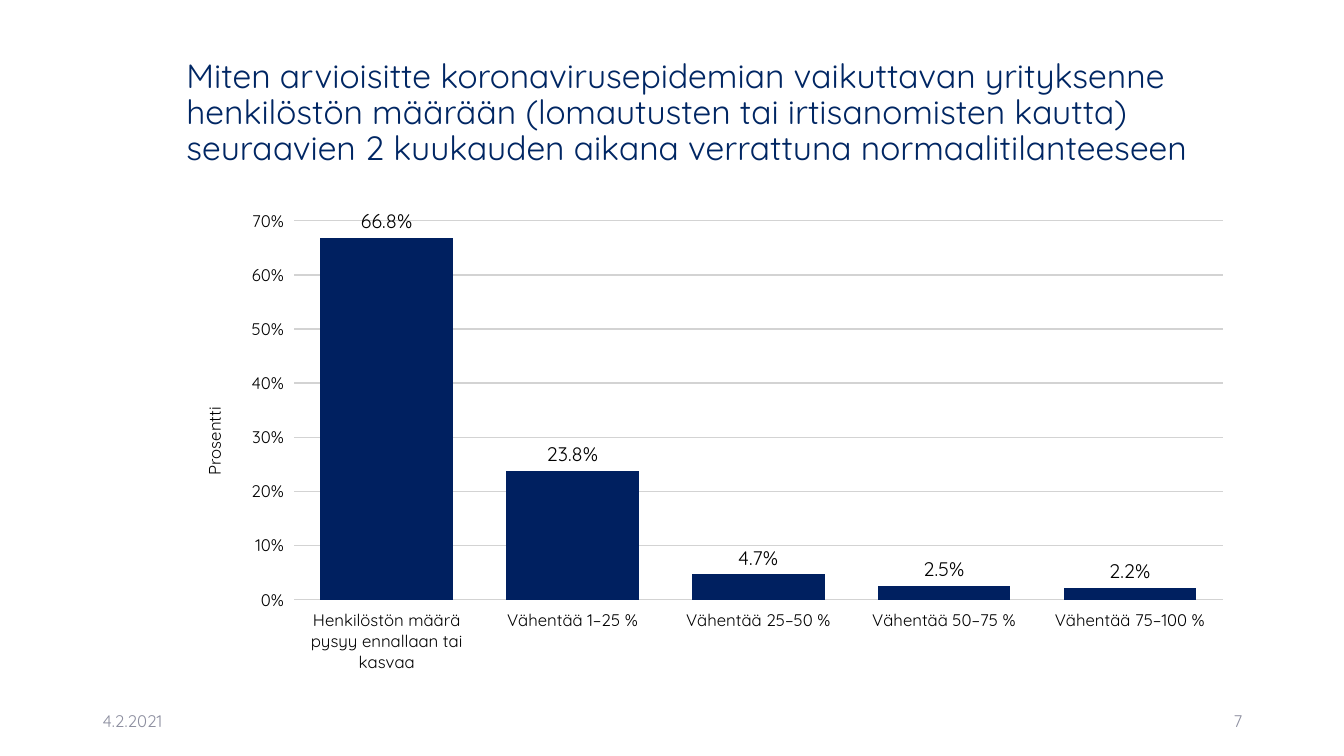
from lxml import etree
from pptx import Presentation
from pptx.chart.data import CategoryChartData
from pptx.dml.color import RGBColor
from pptx.enum.chart import XL_CHART_TYPE, XL_LABEL_POSITION, XL_TICK_MARK
from pptx.enum.text import MSO_ANCHOR, PP_ALIGN
from pptx.oxml.ns import qn
from pptx.util import Inches, Pt

COLUMNS = XL_CHART_TYPE.COLUMN_CLUSTERED
OUTSIDE_END = XL_LABEL_POSITION.OUTSIDE_END
TICK_OUTSIDE = XL_TICK_MARK.OUTSIDE
MIDDLE = MSO_ANCHOR.MIDDLE
LEFT, RIGHT = PP_ALIGN.LEFT, PP_ALIGN.RIGHT

TITLE_BLUE = RGBColor(0x00, 0x26, 0x63)
BAR_BLUE = RGBColor(0x00, 0x20, 0x60)
FOOTER_GREY = RGBColor(0x8C, 0x8E, 0x9F)
GRID_GREY = RGBColor(0xD3, 0xD3, 0xD3)
BLACK = RGBColor(0x00, 0x00, 0x00)

STAFF_EFFECT = {
    "Henkilöstön määrä pysyy ennallaan tai kasvaa": 0.668,
    "Vähentää 1–25 %": 0.238,
    "Vähentää 25–50 %": 0.047,
    "Vähentää 50–75 %": 0.025,
    "Vähentää 75–100 %": 0.022,
}


class SurveySlide:
    """Holds the survey style and draws its elements on one slide."""

    font_name = "Quicksand"

    def __init__(self, presentation):
        self.slide = presentation.slides.add_slide(presentation.slide_layouts[6])

    def style(self, font, size, color=BLACK):
        font.name = self.font_name
        font.size = Pt(size)
        font.bold = False
        font.color.rgb = color

    def text(self, wording, *, at, size, color, align=LEFT, spacing=1.0):
        frame = self.slide.shapes.add_textbox(*map(Inches, at)).text_frame
        frame.word_wrap = True
        frame.vertical_anchor = MIDDLE
        paragraph = frame.paragraphs[0]
        paragraph.alignment = align
        paragraph.line_spacing = spacing
        run = paragraph.add_run()
        run.text = wording
        self.style(run.font, size, color)

    def column_chart(self, shares, *, at, axis_name, plot):
        data = CategoryChartData(number_format="0.0%")
        data.categories = list(shares)
        data.add_series("Series 1", list(shares.values()))
        chart = self.slide.shapes.add_chart(COLUMNS, *map(Inches, at), data).chart
        self.style(chart.font, 11)
        chart.has_legend = False
        chart.has_title = False
        self.axes(chart, axis_name)
        self.bars(chart.plots[0])
        self.place_plot(chart, plot)

    def axes(self, chart, name):
        for axis in (chart.category_axis, chart.value_axis):
            axis.major_tick_mark = TICK_OUTSIDE
            axis.format.line.fill.background()
            self.style(axis.tick_labels.font, 12)
        percent = chart.value_axis
        percent.minimum_scale = 0
        percent.maximum_scale = 0.7
        percent.major_unit = 0.1
        percent.tick_labels.number_format = "0%"
        percent.tick_labels.number_format_is_linked = False
        grid = percent.major_gridlines.format.line
        grid.color.rgb = GRID_GREY
        grid.width = Pt(1)
        caption = percent.axis_title.text_frame
        caption.text = name
        self.style(caption.paragraphs[0].runs[0].font, 12)

    def bars(self, plot):
        plot.gap_width = 40
        plot.vary_by_categories = False
        fill = plot.series[0].format.fill
        fill.solid()
        fill.fore_color.rgb = BAR_BLUE
        plot.has_data_labels = True
        labels = plot.data_labels
        labels.show_value = True
        labels.position = OUTSIDE_END
        labels.number_format = "0.0%"
        labels.number_format_is_linked = False
        self.style(labels.font, 14)

    def place_plot(self, chart, plot):
        area = chart.plots[0]._element.getparent()
        for old in area.findall(qn("c:layout")):
            area.remove(old)
        layout = etree.Element(qn("c:layout"))
        manual = etree.SubElement(layout, qn("c:manualLayout"))
        settings = {"layoutTarget": "inner", "xMode": "edge", "yMode": "edge"}
        settings.update(zip("xywh", plot))
        for tag, value in settings.items():
            etree.SubElement(manual, qn(f"c:{tag}")).set("val", str(value))
        area.insert(0, layout)


def main():
    presentation = Presentation()
    presentation.slide_width = Inches(13.33)
    presentation.slide_height = Inches(7.5)
    survey = SurveySlide(presentation)
    survey.text(
        "Miten arvioisitte koronavirusepidemian vaikuttavan yrityksenne "
        "henkilöstön määrään (lomautusten tai irtisanomisten kautta) "
        "seuraavien 2 kuukauden aikana verrattuna normaalitilanteeseen",
        at=(1.75, 0.4, 10.59, 1.45), size=24, color=TITLE_BLUE, spacing=0.9)
    survey.column_chart(STAFF_EFFECT, at=(1.75, 2, 10.59, 4.76),
                        axis_name="Prosentti", plot=(0.11, 0.04, 0.87, 0.79))
    survey.text("4.2.2021", at=(0.92, 6.95, 3, 0.4), size=12, color=FOOTER_GREY)
    survey.text("7", at=(9.42, 6.95, 3, 0.4), size=12, color=FOOTER_GREY, align=RIGHT)
    presentation.save("out.pptx")


if __name__ == "__main__":
    main()
